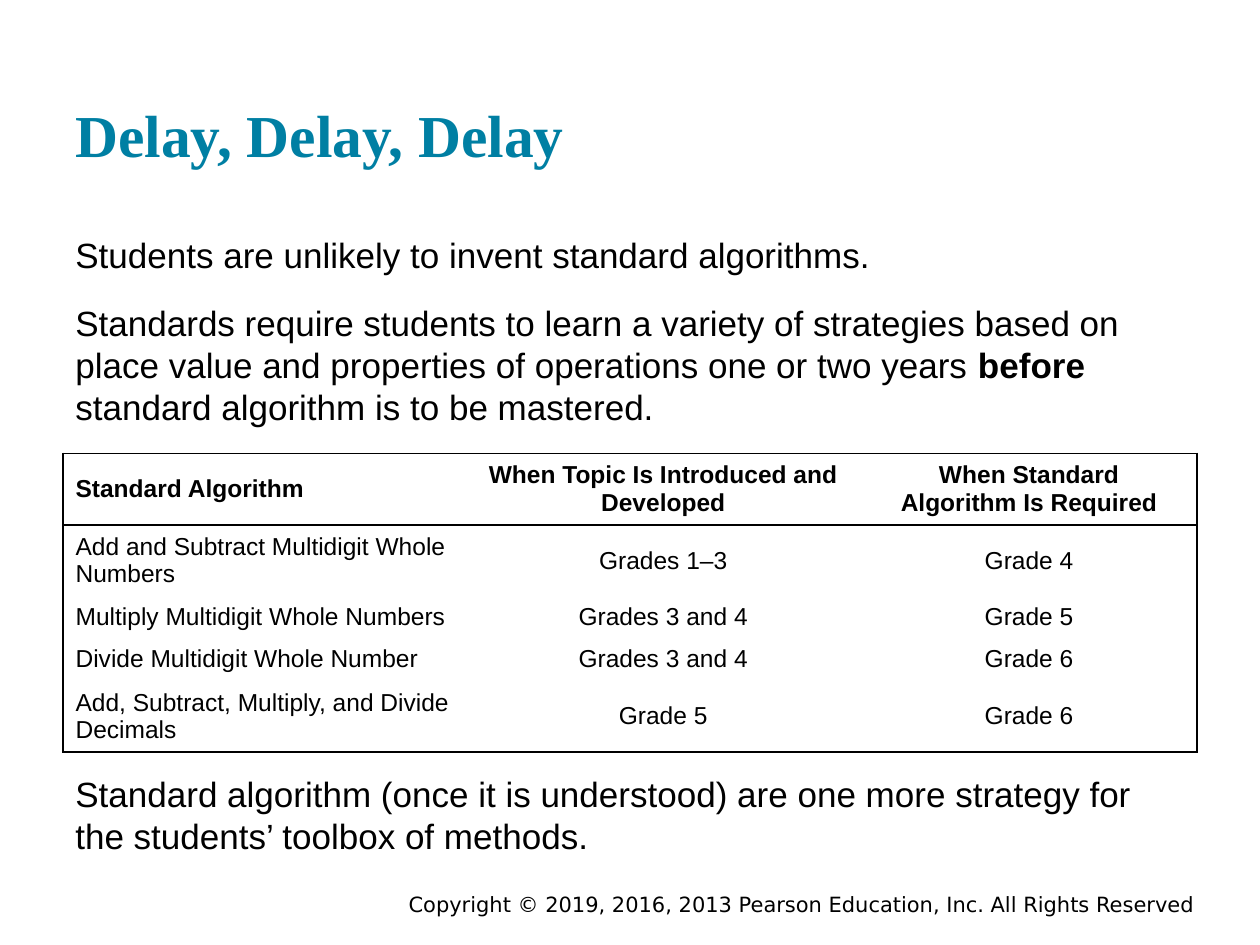
from lxml import etree
from pptx import Presentation
from pptx.dml.color import RGBColor
from pptx.enum.text import MSO_ANCHOR, PP_ALIGN
from pptx.oxml.ns import qn
from pptx.util import Cm, Pt

LEFT, CENTER, RIGHT = PP_ALIGN.LEFT, PP_ALIGN.CENTER, PP_ALIGN.RIGHT
TOP, MIDDLE, BOTTOM = MSO_ANCHOR.TOP, MSO_ANCHOR.MIDDLE, MSO_ANCHOR.BOTTOM
BLACK, TEAL = "000000", "007FA3"

# Each paragraph is a list of (text, bold) runs.
COPYRIGHT = [[("Copyright © 2019, 2016, 2013 Pearson Education, Inc. All Rights Reserved", False)]]
TITLE = [[("Delay, Delay, Delay", True)]]
INTRODUCTION = [
    [("Students are unlikely to invent standard algorithms.", False)],
    [("Standards require students to learn a variety of strategies based on place value "
      "and properties of operations one or two years ", False),
     ("before", True),
     (" standard algorithm is to be mastered.", False)],
]
CONCLUSION = [[("Standard algorithm (once it is understood) are one more strategy for "
                "the students’ toolbox of methods.", False)]]

# Each line of a cell is a paragraph.
TABLE_ROWS = [
    ("Standard Algorithm", "When Topic Is Introduced and Developed",
     "When Standard\nAlgorithm Is Required"),
    ("Add and Subtract Multidigit Whole Numbers", "Grades 1–3", "Grade 4"),
    ("Multiply Multidigit Whole Numbers", "Grades 3 and 4", "Grade 5"),
    ("Divide Multidigit Whole Number", "Grades 3 and 4", "Grade 6"),
    ("Add, Subtract, Multiply, and Divide Decimals", "Grade 5", "Grade 6"),
]
COLUMN_WIDTHS = [8.11, 7.98, 6.77]
ROW_HEIGHTS = [1.36, 1.36, 0.81, 0.81, 1.36]


def color(value):
    return RGBColor.from_string(value)


def write(text_frame, paragraphs, size, font="Arial", hue=BLACK, align=LEFT, gap=0):
    for index, runs in enumerate(paragraphs):
        paragraph = text_frame.paragraphs[0] if index == 0 else text_frame.add_paragraph()
        paragraph.alignment = align
        if index:
            paragraph.space_before = Pt(gap)
        for text, bold in runs:
            run = paragraph.add_run()
            run.text = text
            run.font.name = font
            run.font.size = Pt(size)
            run.font.bold = bold
            run.font.color.rgb = color(hue)


def add_text(slide, box, paragraphs, size, anchor=TOP, inset=0.25, **style):
    text_frame = slide.shapes.add_textbox(*map(Cm, box)).text_frame
    text_frame.word_wrap = True
    text_frame.vertical_anchor = anchor
    text_frame.margin_top = text_frame.margin_bottom = Cm(inset)
    write(text_frame, paragraphs, size, **style)


def set_borders(cell, visible):
    """Draw the sides named in visible (L, R, T, B) and hide the others."""
    properties = cell._tc.get_or_add_tcPr()
    for side in "LRTB":
        line = etree.SubElement(properties, qn(f"a:ln{side}"), w=str(Pt(1)))
        if side in visible:
            fill = etree.SubElement(line, qn("a:solidFill"))
            etree.SubElement(fill, qn("a:srgbClr"), val=BLACK)
        else:
            etree.SubElement(line, qn("a:noFill"))


def add_grade_table(slide):
    last_row, last_column = len(TABLE_ROWS) - 1, len(COLUMN_WIDTHS) - 1
    table = slide.shapes.add_table(
        len(TABLE_ROWS), len(COLUMN_WIDTHS), Cm(1.27), Cm(9.14),
        Cm(sum(COLUMN_WIDTHS)), Cm(sum(ROW_HEIGHTS))).table
    table.first_row = table.horz_banding = False
    for column, width in zip(table.columns, COLUMN_WIDTHS):
        column.width = Cm(width)
    for row, height in zip(table.rows, ROW_HEIGHTS):
        row.height = Cm(height)

    for r, texts in enumerate(TABLE_ROWS):
        for c, text in enumerate(texts):
            cell = table.cell(r, c)
            sides = {"L": c == 0, "R": c == last_column,
                     "T": r <= 1, "B": r in (0, last_row)}
            set_borders(cell, [side for side, shown in sides.items() if shown])
            cell.fill.background()
            cell.vertical_anchor = MIDDLE
            paragraphs = [[(line, r == 0)] for line in text.split("\n")]
            write(cell.text_frame, paragraphs, 14, align=CENTER if c else LEFT)


def main():
    presentation = Presentation()
    presentation.slide_width, presentation.slide_height = Cm(25.4), Cm(19.05)
    slide = presentation.slides.add_slide(presentation.slide_layouts[6])
    add_text(slide, (7.42, 17.91, 16.92, 0.64), COPYRIGHT, 12, anchor=MIDDLE,
             inset=0, font="DejaVu Sans", align=RIGHT)
    add_text(slide, (1.27, 0.61, 22.86, 3.05), TITLE, 34, anchor=BOTTOM,
             font="Times New Roman", hue=TEAL)
    add_text(slide, (1.27, 4.45, 22.86, 4.24), INTRODUCTION, 20, gap=15)
    add_grade_table(slide)
    add_text(slide, (1.27, 15.32, 22.86, 1.83), CONCLUSION, 20)
    presentation.save("out.pptx")


if __name__ == "__main__":
    main()
